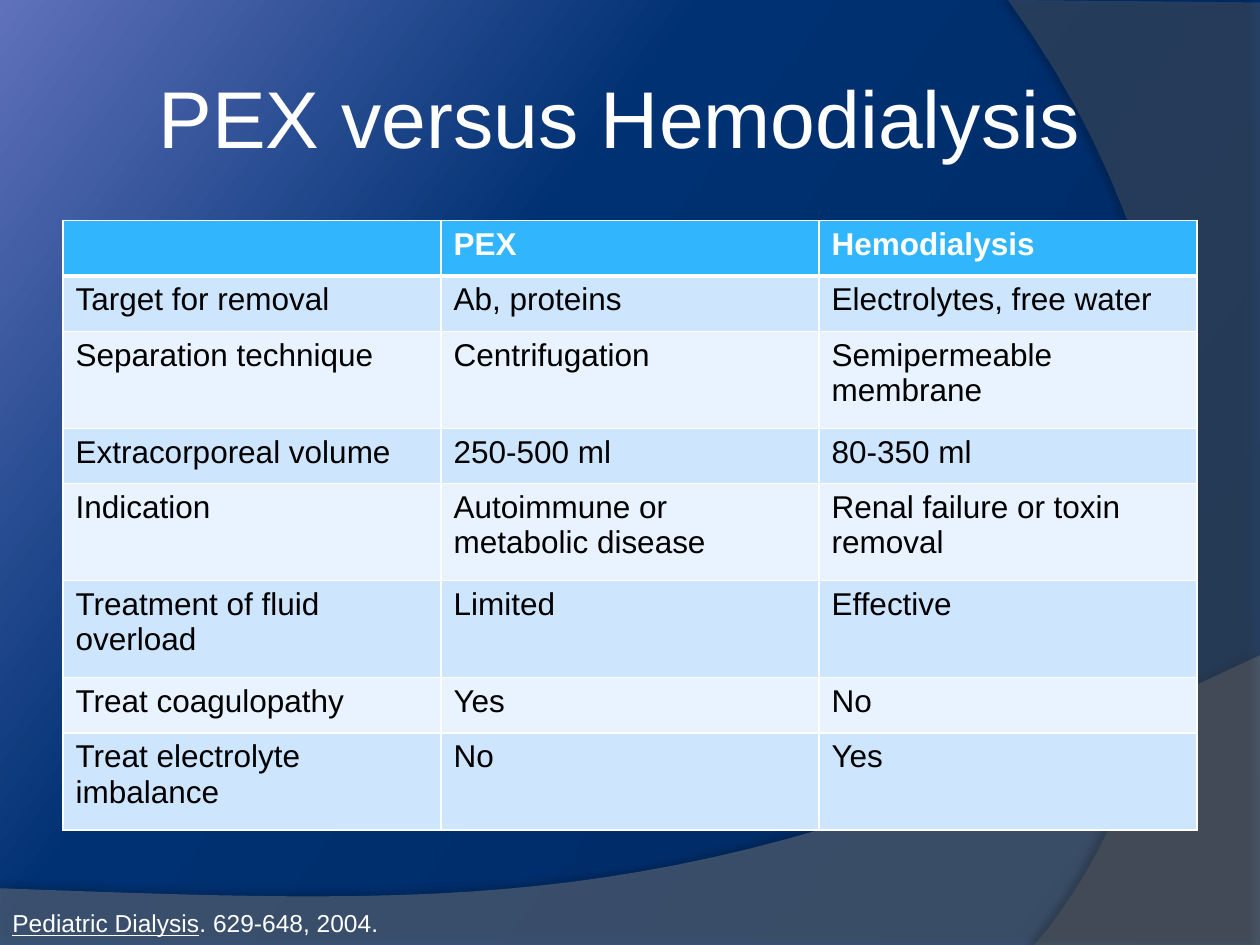
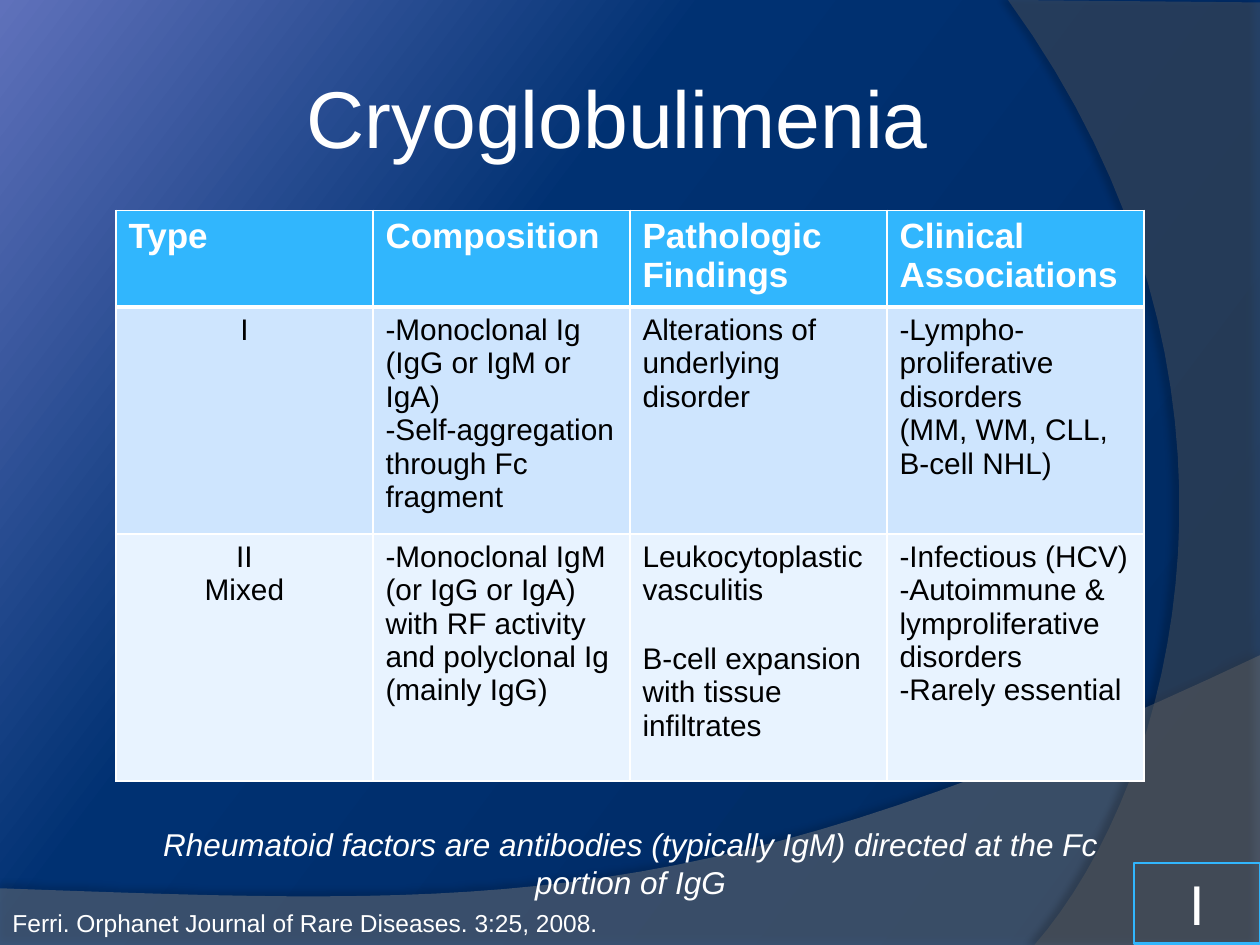
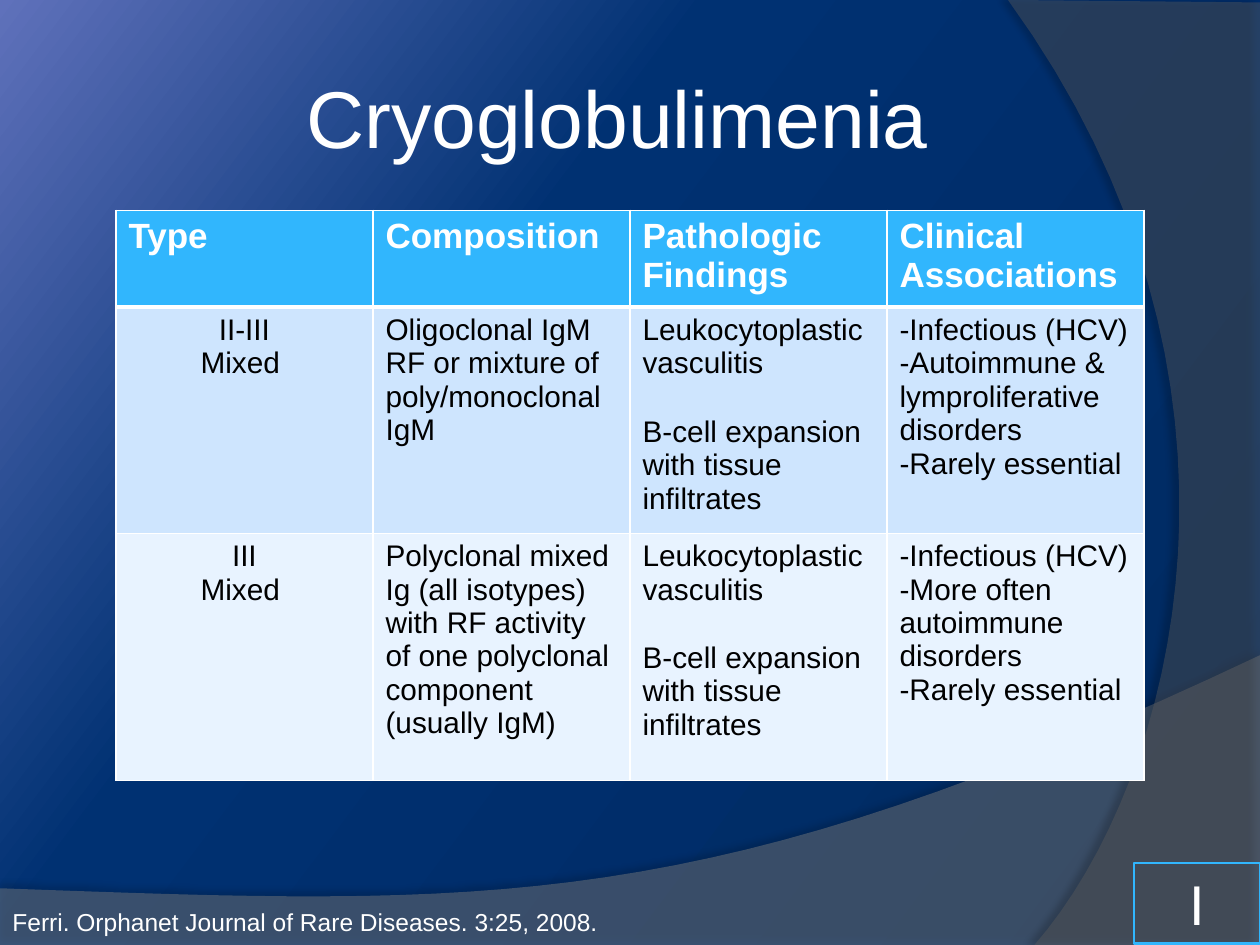
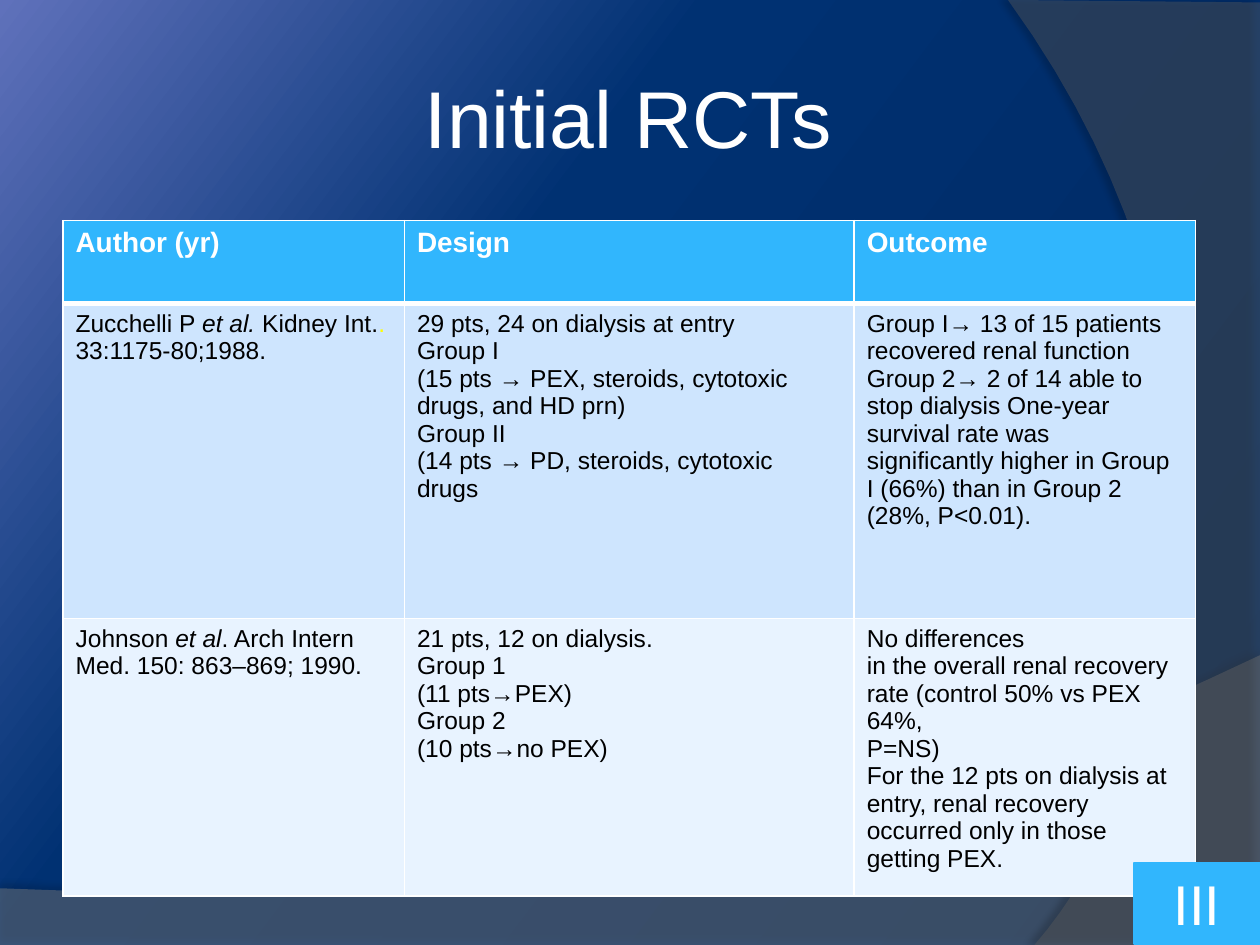
import copy

import pptx
import pptx.dml.color
import pptx.enum.shapes
import pptx.enum.text
import pptx.oxml
import pptx.oxml.ns
import pptx.util

Inches = pptx.util.Inches
Pt = pptx.util.Pt
RGBColor = pptx.dml.color.RGBColor
ALIGN = pptx.enum.text.PP_ALIGN
ANCHOR = pptx.enum.text.MSO_ANCHOR
qn = pptx.oxml.ns.qn

WHITE = RGBColor(0xFF, 0xFF, 0xFF)
BLACK = RGBColor(0x00, 0x00, 0x00)
YELLOW = RGBColor(0xFF, 0xFF, 0x00)
SKY = RGBColor(0x31, 0xB6, 0xFD)
ROW_TINTS = (RGBColor(0xCE, 0xE5, 0xFE), RGBColor(0xE8, 0xF3, 0xFF))
BACKGROUND_STOPS = (
    (0, RGBColor(0x00, 0x29, 0x5F)),
    (0.64, RGBColor(0x00, 0x31, 0x72)),
    (1, RGBColor(0x5F, 0x71, 0xBB)),
)
BACKGROUND_ANGLE = 143
FONT = "Arial"

# Each outline step is a point, or three points for a cubic curve.
BANDS = [
    {"outline": [(0, 7.05), (0, 7.51), (10, 7.51), (10, 5.2),
                 ((5.59, 7.29), (3.91, 7.19), (0, 7.05))],
     "fill": RGBColor(0x7F, 0x7F, 0x7F), "opacity": 45,
     "shadow": {"opacity": 35, "distance": 3.5, "direction": 270}},
    {"outline": [(10, 0.02), (10, 7.5), (8.21, 7.5),
                 ((9.35, 6.19), (10.18, 3), (8, 0))],
     "fill": RGBColor(0x5E, 0x5E, 0x5E), "opacity": 40,
     "shadow": {"opacity": 45, "distance": 4, "direction": 180}},
]

# A cell is a string or a list of paragraphs; a paragraph is a string or a list
# of (text, style) runs; an empty paragraph stands for a one-line gap.
VASCULITIS = ["Leukocytoplastic vasculitis", "",
              "B-cell expansion with tissue infiltrates"]
INFECTIOUS = ["-Infectious (HCV)", "-Autoimmune & lymproliferative disorders",
              "-Rarely essential"]
CRYO_HEADER = ["Type", "Composition", "Pathologic Findings", "Clinical Associations"]
CRYO_LAYOUT = {"at": (0.92, 1.67), "columns": [2.04] * 4, "heights": [0.74, 1.68, 1.96],
               "header_size": 20, "body_size": 17, "center_first": True}
CRYO_SOURCE = "Ferri. Orphanet Journal of Rare Diseases. 3:25, 2008."
NARROW_TITLE = (0.9, 0.3, 8.17, 1.25)

SLIDES = [
    {"title": "PEX versus Hemodialysis ",
     "title_box": (0.5, 0.3, 9, 1.25),
     "table": {"at": (0.5, 1.75), "columns": [3] * 3,
               "heights": [0.44, 0.44, 0.77, 0.44, 0.77, 0.77, 0.44, 0.77],
               "header_size": 18, "body_size": 18},
     "rows": [
         ["", "PEX", "Hemodialysis"],
         ["Target for removal", "Ab, proteins", "Electrolytes, free water"],
         ["Separation technique", "Centrifugation", "Semipermeable membrane"],
         ["Extracorporeal volume", "250-500 ml", "80-350 ml"],
         ["Indication", "Autoimmune or metabolic disease",
          "Renal failure or toxin removal"],
         ["Treatment of fluid overload", "Limited", "Effective"],
         ["Treat coagulopathy", "Yes", "No"],
         ["Treat electrolyte imbalance", "No", "Yes"],
     ],
     "source": [("Pediatric Dialysis", "underline"), (". 629-648, 2004.", "")],
     "source_box": (0, 7.16, 7.48, 0.34)},
    {"title": "Cryoglobulimenia ",
     "title_box": NARROW_TITLE,
     "table": CRYO_LAYOUT,
     "rows": [
         CRYO_HEADER,
         ["I",
          ["-Monoclonal Ig", "(IgG or IgM or IgA)",
           "-Self-aggregation through Fc fragment"],
          "Alterations of underlying disorder",
          ["-Lympho-proliferative disorders", "(MM, WM, CLL, B-cell NHL)"]],
         [["II", "Mixed"],
          "-Monoclonal IgM (or IgG or IgA) with RF activity and polyclonal Ig (mainly IgG)",
          VASCULITIS, INFECTIOUS],
     ],
     "source": CRYO_SOURCE,
     "source_box": (0, 7.16, 6.08, 0.34),
     "remark": "Rheumatoid factors are antibodies (typically IgM) directed at the Fc "
               "portion of IgG",
     "category": "I"},
    {"title": "Cryoglobulimenia ",
     "title_box": NARROW_TITLE,
     "table": CRYO_LAYOUT,
     "rows": [
         CRYO_HEADER,
         [["II-III", "Mixed "],
          "Oligoclonal IgM RF or mixture of poly/monoclonal IgM",
          VASCULITIS, INFECTIOUS],
         [["III", "Mixed "],
          "Polyclonal mixed Ig (all isotypes) with RF activity of one polyclonal "
          "component (usually IgM)",
          VASCULITIS,
          ["-Infectious (HCV)", "-More often autoimmune disorders", "-Rarely essential"]],
     ],
     "source": CRYO_SOURCE,
     "source_box": (0, 7.15, 6.08, 0.34),
     "category": "I"},
    {"title": "Initial RCTs",
     "title_box": NARROW_TITLE,
     "table": {"at": (0.5, 1.75), "columns": [2.71, 3.57, 2.71],
               "heights": [0.66, 2.5, 2.07], "header_size": 16, "body_size": 14},
     "rows": [
         ["Author (yr)", "Design", "Outcome"],
         [[[("Zucchelli P ", ""), ("et al. ", "italic"), ("Kidney Int.", ""),
            (". ", "yellow"), ("33:1175-80;1988.", "")]],
          ["29 pts, 24 on dialysis at entry", "Group I",
           "(15 pts → PEX, steroids, cytotoxic drugs, and HD prn)", "Group II",
           "(14 pts → PD, steroids, cytotoxic drugs"],
          ["Group I→ 13 of 15 patients recovered renal function",
           "Group 2→ 2 of 14 able to stop dialysis One-year survival rate was "
           "significantly higher in Group I (66%) than in Group 2 (28%, P<0.01)."]],
         [[[("Johnson ", ""), ("et al", "italic"),
            (". Arch Intern Med. 150: 863–869; 1990.", "")]],
          ["21 pts, 12 on dialysis.", "Group 1", "(11 pts→PEX)", "Group 2",
           "(10 pts→no PEX)"],
          ["No differences",
           "in the overall renal recovery rate (control 50% vs PEX 64%,", "P=NS)",
           "For the 12 pts on dialysis at entry, renal recovery occurred only in "
           "those getting PEX."]],
     ],
     "category": "III", "category_fill": SKY},
]
REMARK_BOX = (0.92, 6.5, 8.17, 0.71)
CATEGORY_BOX = (9, 6.85, 1, 0.64)


def inches(values):
    return [Inches(value) for value in values]


def write(frame, paragraphs, size, color=WHITE, align=ALIGN.LEFT, bold=False, italic=False):
    if isinstance(paragraphs, str):
        paragraphs = [paragraphs]
    frame.word_wrap = True
    paragraph, gap = frame.paragraphs[0], 0
    started = False
    for content in paragraphs:
        if not content:
            gap += size * 1.15
            continue
        if started:
            paragraph = frame.add_paragraph()
        started = True
        paragraph.alignment = align
        if gap:
            paragraph.space_before, gap = Pt(round(gap)), 0
        font = paragraph.font
        font.name, font.size, font.bold, font.italic = FONT, Pt(size), bold, italic
        font.color.rgb = color
        for text, style in [(content, "")] if isinstance(content, str) else content:
            run = paragraph.add_run()
            run.text = text
            if style == "italic":
                run.font.italic = True
            elif style == "underline":
                run.font.underline = True
            elif style == "yellow":
                run.font.color.rgb = YELLOW


def add_text(slide, box, paragraphs, size, **style):
    frame = slide.shapes.add_textbox(*inches(box)).text_frame
    write(frame, paragraphs, size, **style)
    return frame


def trace(outline, steps=32):
    """Turn an outline with cubic curves into a list of points."""
    points = []
    for step in outline:
        if not isinstance(step[0], tuple):
            points.append(step)
            continue
        curve = (points[-1], *step)
        for i in range(1, steps + 1):
            t = i / steps
            weights = ((1 - t) ** 3, 3 * t * (1 - t) ** 2, 3 * t * t * (1 - t), t ** 3)
            points.append(tuple(sum(w * p[axis] for w, p in zip(weights, curve))
                                for axis in (0, 1)))
    return points


def add_band(slide, band):
    start, *rest = [inches(point) for point in trace(band["outline"])]
    builder = slide.shapes.build_freeform(*start)
    builder.add_line_segments(rest, close=True)
    shape = builder.convert_to_shape()
    shape.fill.solid()
    shape.fill.fore_color.rgb = band["fill"]
    shape.line.fill.background()
    shape.shadow.inherit = False
    properties = shape.element.spPr
    color = properties.find(qn("a:solidFill"))[0]
    color.append(pptx.oxml.parse_xml(
        f'<a:alpha {pptx.oxml.ns.nsdecls("a")} val="{band["opacity"] * 1000}"/>'))
    shadow = band["shadow"]
    properties.find(qn("a:effectLst")).append(pptx.oxml.parse_xml(
        f'<a:outerShdw {pptx.oxml.ns.nsdecls("a")} blurRad="{Pt(4)}" '
        f'dist="{Pt(shadow["distance"])}" dir="{shadow["direction"] * 60000}" '
        f'algn="ctr" rotWithShape="0"><a:srgbClr val="{BLACK}">'
        f'<a:alpha val="{shadow["opacity"] * 1000}"/></a:srgbClr></a:outerShdw>'))
    return shape


def set_backdrop(layout, slide):
    """Give the layout its gradient and bands; the slide serves to draw the bands."""
    for placeholder in list(layout.placeholders):
        placeholder.element.getparent().remove(placeholder.element)
    fill = layout.background.fill
    fill.gradient()
    fill.gradient_angle = BACKGROUND_ANGLE
    stop_list = layout.element.find(".//" + qn("a:gsLst"))
    stop_list.append(copy.deepcopy(stop_list[-1]))
    for stop, (position, color) in zip(fill.gradient_stops, BACKGROUND_STOPS):
        stop.position = position
        stop.color.rgb = color
    for band in [add_band(slide, band) for band in BANDS]:
        layout.shapes.element.append(band.element)


def set_borders(cell, bottom):
    properties = cell._tc.get_or_add_tcPr()
    widths = {"lnL": 1, "lnR": 1, "lnT": 1, "lnB": bottom}
    for position, (side, width) in enumerate(widths.items()):
        properties.insert(position, pptx.oxml.parse_xml(
            f'<a:{side} {pptx.oxml.ns.nsdecls("a")} w="{Pt(width)}"><a:solidFill>'
            f'<a:srgbClr val="{WHITE}"/></a:solidFill></a:{side}>'))


def add_comparison(slide, rows, at, columns, heights, header_size, body_size,
                   center_first=False):
    size = (sum(columns), sum(heights))
    table = slide.shapes.add_table(len(rows), len(columns), *inches(at + size)).table
    for column, width in zip(table.columns, columns):
        column.width = Inches(width)
    for r, (row, height) in enumerate(zip(rows, heights)):
        table.rows[r].height = Inches(height)
        header = r == 0
        for c, content in enumerate(row):
            cell = table.cell(r, c)
            cell.fill.solid()
            cell.fill.fore_color.rgb = SKY if header else ROW_TINTS[(r - 1) % 2]
            # The rule under the header is shared with the row below it.
            set_borders(cell, bottom=3 if header else 1)
            if r == 1:
                cell._tc.tcPr.find(qn("a:lnT")).set("w", str(Pt(3)))
            centered = center_first and c == 0 and not header
            write(cell.text_frame, content, header_size if header else body_size,
                  color=WHITE if header else BLACK, bold=header,
                  align=ALIGN.CENTER if centered else ALIGN.LEFT)


def add_category(slide, label, fill):
    badge = slide.shapes.add_shape(pptx.enum.shapes.MSO_SHAPE.RECTANGLE,
                                   *inches(CATEGORY_BOX))
    badge.shadow.inherit = False
    if fill:
        badge.fill.solid()
        badge.fill.fore_color.rgb = fill
    else:
        badge.fill.background()
    badge.line.color.rgb = SKY
    badge.line.width = Pt(1.5)
    badge.text_frame.vertical_anchor = ANCHOR.TOP
    write(badge.text_frame, label, 32, align=ALIGN.CENTER)


def add_content(slide, content):
    title = add_text(slide, content["title_box"], content["title"], 46, align=ALIGN.CENTER)
    title.vertical_anchor = ANCHOR.MIDDLE
    title.margin_left = title.margin_right = Inches(0.05)
    add_comparison(slide, content["rows"], **content["table"])
    if "source" in content:
        add_text(slide, content["source_box"], [content["source"]], 14)
    if "remark" in content:
        add_text(slide, REMARK_BOX, content["remark"], 18, align=ALIGN.CENTER, italic=True)
    if "category" in content:
        add_category(slide, content["category"], content.get("category_fill"))


def main():
    deck = pptx.Presentation()
    deck.slide_width, deck.slide_height = Inches(10), Inches(7.5)
    blank = deck.slide_layouts[6]
    slides = [deck.slides.add_slide(blank) for _ in SLIDES]
    set_backdrop(blank, slides[0])
    for slide, content in zip(slides, SLIDES):
        add_content(slide, content)
    deck.save("out.pptx")


if __name__ == "__main__":
    main()
